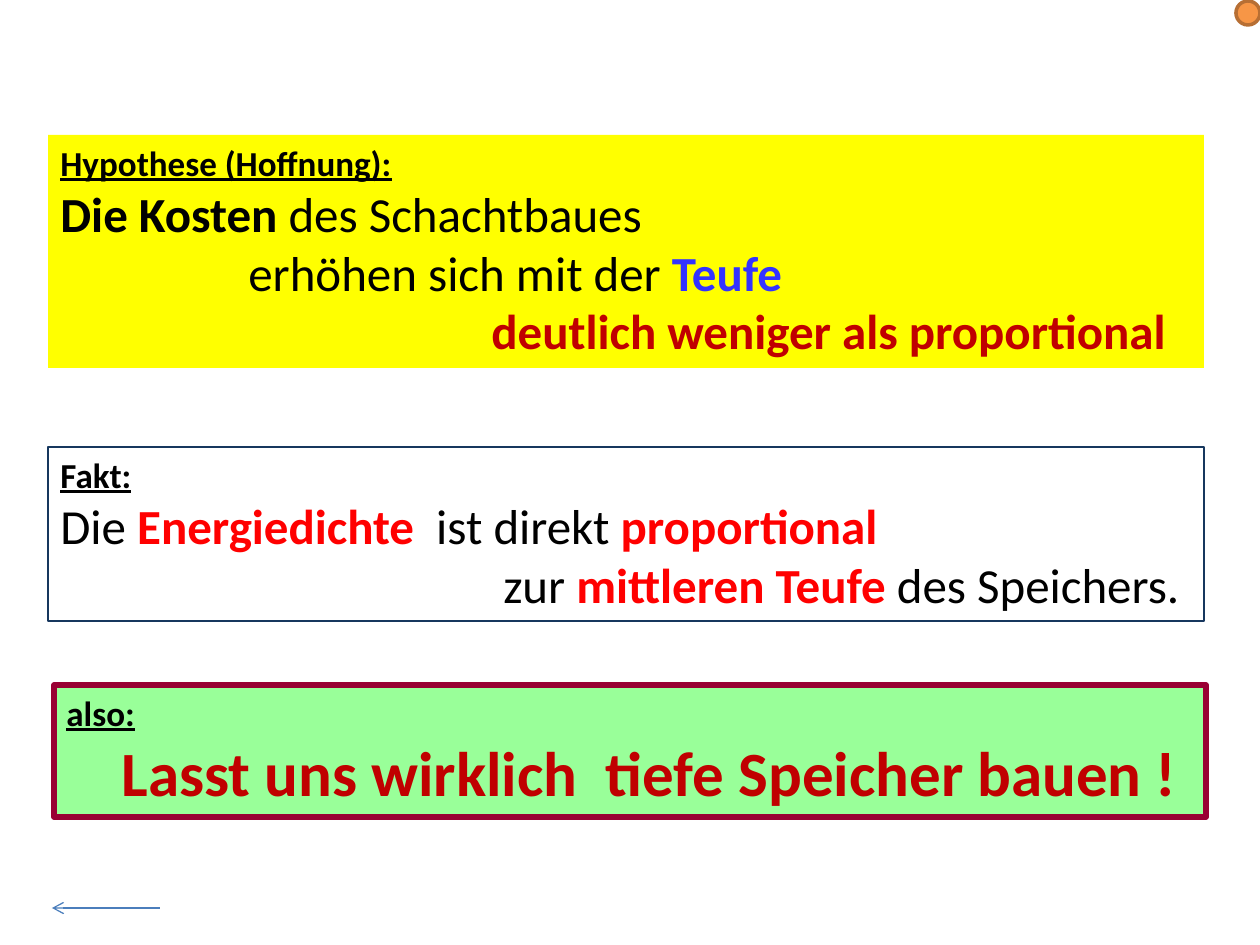
from dataclasses import dataclass

from lxml.etree import SubElement
from pptx import Presentation
from pptx.dml.color import RGBColor
from pptx.enum.shapes import MSO_CONNECTOR as CONN, MSO_SHAPE as SHAPE
from pptx.enum.text import MSO_ANCHOR as ANCHOR, PP_ALIGN as ALIGN
from pptx.oxml.ns import qn
from pptx.util import Pt


@dataclass(frozen=True)
class Theme:
    font: str = "Calibri"
    label: int = 20
    body: int = 28
    claim: int = 36
    black: str = "000000"
    blue: str = "3333FF"
    red: str = "FF0000"
    dark_red: str = "C00000"
    yellow: str = "FFFF00"
    green: str = "99FF99"
    navy: str = "17375E"
    crimson: str = "990033"
    arrow: str = "4B7EBC"
    orange: str = "F79646"
    brown: str = "B76F34"


T = Theme()
W, H = 1260, 945
ARROW = (160, 908, 52, 908)
DOT = (1236, 1, 24, 24)

BOXES = [
    dict(at=(48, 135, 1156, 233), fill=T.yellow, label="Hypothese (Hoffnung):", lines=[
        dict(runs=[("Die Kosten ", T.black, True), ("des Schachtbaues", T.black, False)]),
        dict(indent=188, runs=[("erhöhen sich mit der ", T.black, False), ("Teufe", T.blue, True)]),
        dict(indent=431, runs=[("deutlich weniger als proportional", T.dark_red, True)]),
    ]),
    dict(at=(48, 447, 1156, 174), line=T.navy, width=0.75, label="Fakt:", lines=[
        dict(runs=[("Die ", T.black, False), ("Energiedichte", T.red, True),
                   ("  ist direkt ", T.black, False), ("proportional", T.red, True)]),
        dict(indent=443, runs=[("zur ", T.black, False), ("mittleren Teufe ", T.red, True),
                               ("des Speichers.", T.black, False)]),
    ]),
    dict(at=(54, 685, 1152, 132), fill=T.green, line=T.crimson, width=3, label="also:", lines=[
        dict(indent=39, size=T.claim, align=ALIGN.CENTER,
             runs=[("Lasst uns wirklich  tiefe Speicher bauen !", T.dark_red, True)]),
    ]),
]


def px(*values):
    return [round(v * 914400 / 126) for v in values]


def paint(sp, fill=None, line=None, width=1):
    if fill:
        sp.fill.solid()
        sp.fill.fore_color.rgb = RGBColor.from_string(fill)
    if line:
        sp.line.color.rgb = RGBColor.from_string(line)
        sp.line.width = Pt(width)


def add_run(p, text, color=T.black, size=T.body, bold=False, underline=False):
    r = p.add_run()
    r.text = text
    f = r.font
    f.name, f.size, f.bold, f.underline = T.font, Pt(size), bold, underline
    f.color.rgb = RGBColor.from_string(color)


def add_box(slide, at, label, lines, **look):
    sp = slide.shapes.add_textbox(*px(*at))
    paint(sp, **look)
    tf = sp.text_frame
    tf.word_wrap = True
    tf.vertical_anchor = ANCHOR.TOP
    add_run(tf.paragraphs[0], label, size=T.label, bold=True, underline=True)
    for line in lines:
        p = tf.add_paragraph()
        p.alignment = line.get("align", ALIGN.LEFT)
        p._p.get_or_add_pPr().set("marL", str(px(line.get("indent", 0))[0]))
        for text, color, bold in line["runs"]:
            add_run(p, text, color=color, size=line.get("size", T.body), bold=bold)


def add_arrow(slide, ends):
    c = slide.shapes.add_connector(CONN.STRAIGHT, *px(*ends))
    c.line.color.rgb = RGBColor.from_string(T.arrow)
    c.line.width = Pt(0.75)
    SubElement(c.line._get_or_add_ln(), qn("a:tailEnd"), type="arrow")
    SubElement(c._element.spPr, qn("a:effectLst"))


def main():
    prs = Presentation()
    prs.slide_width, prs.slide_height = px(W, H)
    slide = prs.slides.add_slide(prs.slide_layouts[6])
    for box in BOXES:
        add_box(slide, **box)
    add_arrow(slide, ARROW)
    dot = slide.shapes.add_shape(SHAPE.OVAL, *px(*DOT))
    dot.shadow.inherit = False
    paint(dot, fill=T.orange, line=T.brown, width=2)
    prs.save("out.pptx")


if __name__ == "__main__":
    main()
